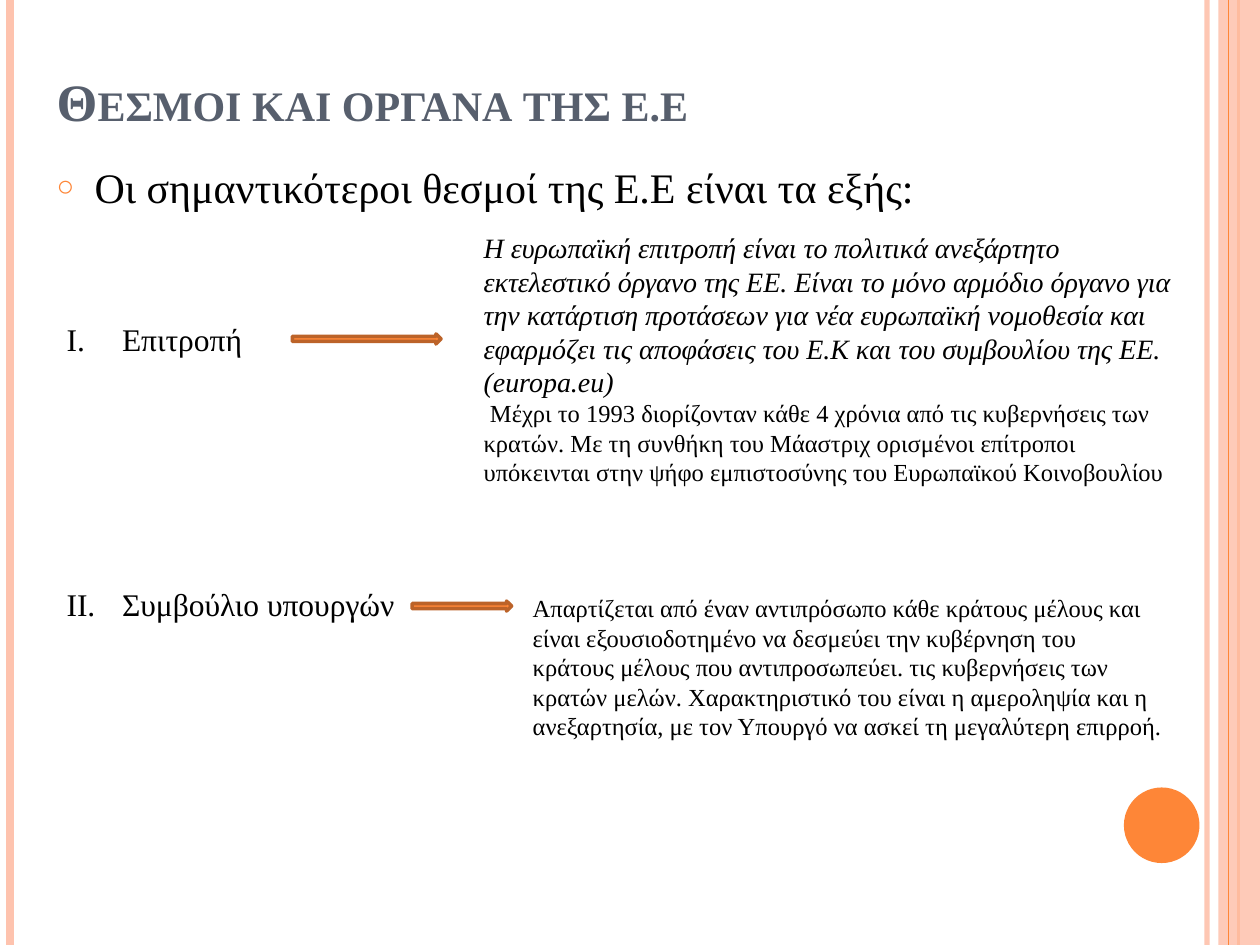
from lxml.etree import SubElement
from pptx import Presentation
from pptx.dml.color import RGBColor
from pptx.enum.shapes import MSO_CONNECTOR, MSO_SHAPE
from pptx.enum.text import MSO_ANCHOR, MSO_AUTO_SIZE, PP_ALIGN
from pptx.oxml.ns import qn
from pptx.util import Inches, Pt

COLOURS = {"orange": "FE8637", "peach": "FEC3AE", "rust": "BC6329",
           "slate": "575F6D", "black": "000000"}
FONT = "Times New Roman"

TITLE = "Θεσμοι και οργανα τησ ε.ε"
INTRO = "Οι σημαντικότεροι θεσμοί της Ε.Ε είναι τα εξής:"
INSTITUTIONS = ["Επιτροπή", "Συμβούλιο υπουργών"]
COMMISSION = [
    ("Η ευρωπαϊκή επιτροπή είναι το πολιτικά ανεξάρτητο εκτελεστικό όργανο της ΕΕ. "
     "Είναι το μόνο αρμόδιο όργανο για την κατάρτιση προτάσεων για νέα ευρωπαϊκή "
     "νομοθεσία και εφαρμόζει τις αποφάσεις του Ε.Κ και του συμβουλίου της ΕΕ.(europa.eu)",
     {"size": Pt(16), "italic": True}, 0),
    ("Μέχρι το 1993 διορίζονταν κάθε 4 χρόνια από τις κυβερνήσεις των κρατών. "
     "Με τη συνθήκη του Μάαστριχ ορισμένοι επίτροποι υπόκεινται στην ψήφο "
     "εμπιστοσύνης του Ευρωπαϊκού Κοινοβουλίου", {"size": Pt(14)}, 0.05),
]
COUNCIL = [
    ("Απαρτίζεται από έναν αντιπρόσωπο κάθε κράτους μέλους και είναι εξουσιοδοτημένο "
     "να δεσμεύει την κυβέρνηση του κράτους μέλους που αντιπροσωπεύει. τις κυβερνήσεις "
     "των κρατών μελών. Χαρακτηριστικό του είναι η αμεροληψία και η ανεξαρτησία, με τον "
     "Υπουργό να ασκεί τη μεγαλύτερη επιρροή.", {"size": Pt(14)}, 0),
]
DESCRIPTIONS = [((3.74, 1.78, 5.75, 2.19), COMMISSION),
                ((4.13, 4.66, 5.2, 1.28), COUNCIL)]
ARROWS = [(2.32, 2.65, 1.18, 0.08), (3.27, 4.77, 0.79, 0.08)]
STRIPES = [(9.58, "peach", 3, 93), (0.08, "peach", 4.5, 100),
           (9.83, "orange", 1.5, 100), (9.75, "orange", 0.75, 100)]
BAND = (9.67, 0, 0.33, 7.5)
DISC = (8.92, 6.25, 0.6, 0.6)


def paint(target, name, opacity=100):
    target.solid()
    target.fore_color.rgb = RGBColor.from_string(COLOURS[name])
    if opacity < 100:
        colour = target._xPr.find(".//" + qn("a:srgbClr"))
        SubElement(colour, qn("a:alpha"), val=str(opacity * 1000))


def add_stripe(page, x, name, width, opacity):
    stripe = page.shapes.add_connector(
        MSO_CONNECTOR.STRAIGHT, Inches(x), 0, Inches(x), Inches(7.5))
    stripe.line.width = Pt(width)
    paint(stripe.line.fill, name, opacity)
    SubElement(stripe._element.spPr, qn("a:effectLst"))


def add_figure(page, kind, place, name, opacity=100, outline=None):
    figure = page.shapes.add_shape(kind, *map(Inches, place))
    figure.shadow.inherit = False
    paint(figure.fill, name, opacity)
    if outline:
        paint(figure.line.fill, outline)
        figure.line.width = Pt(2)
    else:
        figure.line.fill.background()


def place_shape(shape, place):
    for name, value in zip(("left", "top", "width", "height"), place):
        setattr(shape, name, Inches(value))
    frame = shape.text_frame
    frame.word_wrap = True
    frame.auto_size = MSO_AUTO_SIZE.NONE
    return frame


def add_box(page, place):
    return place_shape(page.shapes.add_textbox(0, 0, 0, 0), place)


def set_indent(para, margin, first):
    properties = para._p.get_or_add_pPr()
    properties.set("marL", str(Inches(margin)))
    properties.set("indent", str(Inches(first)))
    return properties


def write(para, text, formats, colour="black", before=0):
    para.space_before = Pt(before)
    span = para.add_run()
    span.text = text
    for name, value in {"name": FONT, **formats}.items():
        setattr(span.font, name, value)
    span.font.color.rgb = RGBColor.from_string(COLOURS[colour])
    return span


def paragraph_at(frame, index):
    return frame.add_paragraph() if index else frame.paragraphs[0]


def add_title(page):
    frame = place_shape(page.shapes.title, (0.35, 0.29, 8.17, 0.81))
    frame.vertical_anchor = MSO_ANCHOR.BOTTOM
    para = frame.paragraphs[0]
    para.alignment = PP_ALIGN.LEFT
    span = write(para, TITLE, {"size": Pt(30), "bold": True}, "slate")
    span.font._element.set("cap", "small")


def add_intro(page):
    frame = place_shape(page.placeholders[1], (0.35, 1.23, 8.17, 0.82))
    para = frame.paragraphs[0]
    properties = set_indent(para, 0.3, -0.3)
    colour = SubElement(properties, qn("a:buClr"))
    SubElement(colour, qn("a:srgbClr"), val=COLOURS["orange"])
    SubElement(properties, qn("a:buSzPct"), val="70000")
    SubElement(properties, qn("a:buChar"), char="○")
    write(para, INTRO, {"size": Pt(24)})


def add_institutions(page):
    frame = add_box(page, (0.43, 2.49, 6.22, 3.74))
    for index, text in enumerate(INSTITUTIONS):
        para = paragraph_at(frame, index)
        properties = set_indent(para, 0.44, -0.44)
        SubElement(properties, qn("a:buFont"), typeface=FONT)
        SubElement(properties, qn("a:buAutoNum"), type="romanUcPeriod")
        write(para, text, {"size": Pt(18)}, before=130 * index)


def add_description(page, place, paragraphs):
    frame = add_box(page, place)
    for index, (text, formats, first) in enumerate(paragraphs):
        para = paragraph_at(frame, index)
        set_indent(para, 0, first)
        write(para, text, formats)


def main():
    deck = Presentation()
    deck.slide_width, deck.slide_height = Inches(10), Inches(7.5)
    page = deck.slides.add_slide(deck.slide_layouts[1])
    for stripe in STRIPES[:3]:
        add_stripe(page, *stripe)
    add_figure(page, MSO_SHAPE.RECTANGLE, BAND, "peach", 87)
    add_stripe(page, *STRIPES[3])
    add_figure(page, MSO_SHAPE.OVAL, DISC, "orange")
    add_title(page)
    add_intro(page)
    add_institutions(page)
    for place in ARROWS:
        add_figure(page, MSO_SHAPE.RIGHT_ARROW, place, "orange", outline="rust")
    for place, paragraphs in DESCRIPTIONS:
        add_description(page, place, paragraphs)
    deck.save("out.pptx")


if __name__ == "__main__":
    main()
